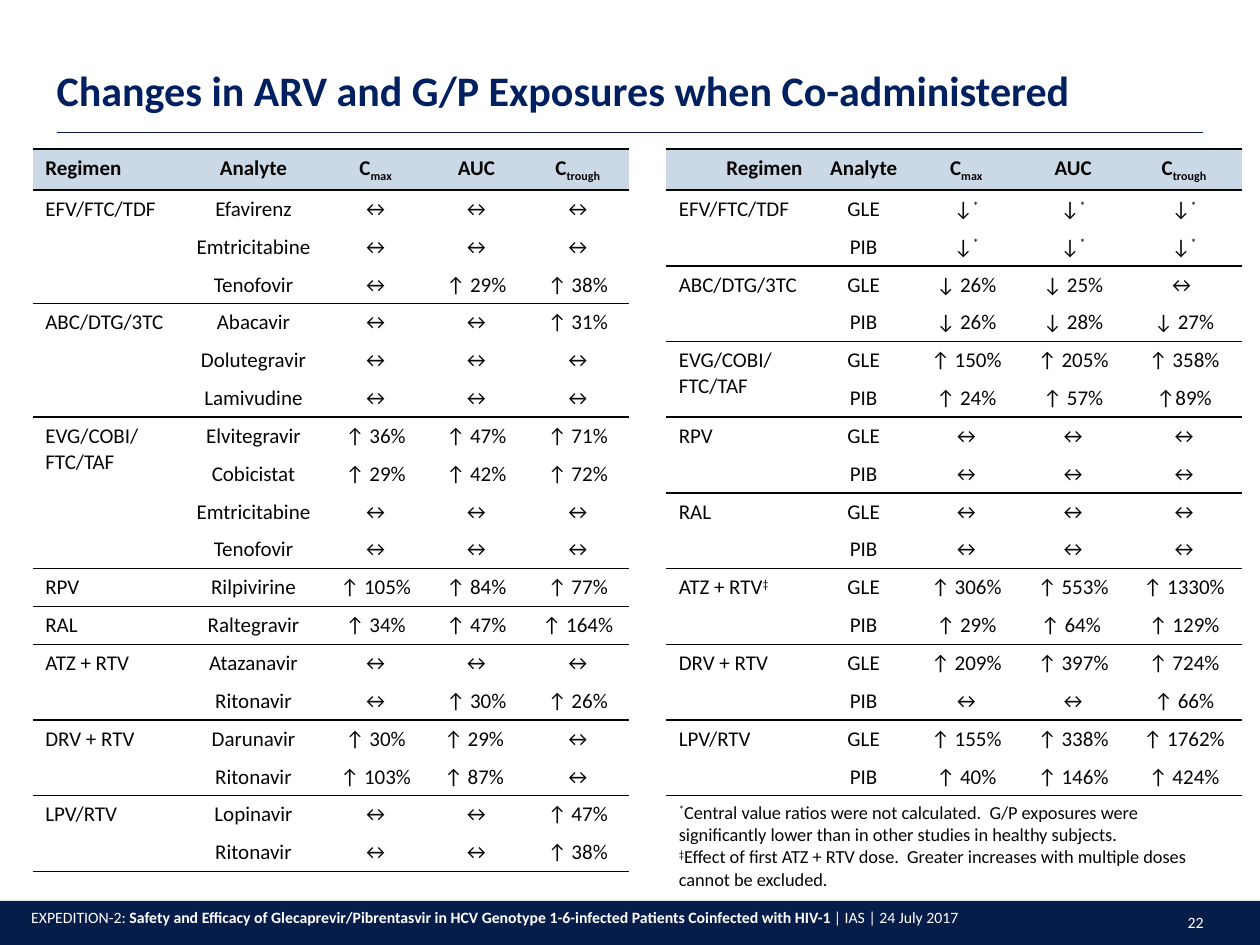
import lxml.etree
import pptx
import pptx.dml.color
import pptx.enum.shapes
import pptx.enum.text
import pptx.oxml.ns
import pptx.util

Cm = pptx.util.Cm
Pt = pptx.util.Pt
qn = pptx.oxml.ns.qn
ALIGN = pptx.enum.text.PP_ALIGN
ANCHOR = pptx.enum.text.MSO_ANCHOR

NAVY, TITLE_BLUE, INK, HEADER_BLUE, WHITE = "071D49", "002060", "070605", "CBD9E7", "FFFFFF"
FONT = "Calibri"
NO_STYLE = "{2D5ABB26-0587-4C30-8999-92F81FD0307C}"
BASELINES = {"_": "-25000", "^": "30000"}
HEADER_HEIGHT, ROW_HEIGHT, NOTE_HEIGHT = 0.83, 0.76, 2.03
HEADINGS = ["Regimen", "Analyte", "C|_max", "AUC", "C|_trough"]

ARV_GROUPS = [
    ("EFV/FTC/TDF", ["Efavirenz,↔,↔,↔", "Emtricitabine,↔,↔,↔", "Tenofovir,↔,↑ 29%,↑ 38%"]),
    ("ABC/DTG/3TC", ["Abacavir,↔,↔,↑ 31%", "Dolutegravir,↔,↔,↔", "Lamivudine,↔,↔,↔"]),
    ("EVG/COBI/\nFTC/TAF", ["Elvitegravir,↑ 36%,↑ 47%,↑ 71%", "Cobicistat,↑ 29%,↑ 42%,↑ 72%",
                            "Emtricitabine,↔,↔,↔", "Tenofovir,↔,↔,↔"]),
    ("RPV", ["Rilpivirine,↑ 105%,↑ 84%,↑ 77%"]),
    ("RAL", ["Raltegravir,↑ 34%,↑ 47%,↑ 164%"]),
    ("ATZ + RTV", ["Atazanavir,↔,↔,↔", "Ritonavir,↔,↑ 30%,↑ 26%"]),
    ("DRV + RTV", ["Darunavir,↑ 30%,↑ 29% ,↔", "Ritonavir,↑ 103%,↑ 87% ,↔"]),
    ("LPV/RTV", ["Lopinavir,↔,↔,↑ 47%", "Ritonavir,↔,↔,↑ 38%"]),
]
GP_GROUPS = [
    ("EFV/FTC/TDF", ["GLE,↓|^*,↓|^*,↓|^*", "PIB,↓|^*,↓|^*,↓|^*"]),
    ("ABC/DTG/3TC", ["GLE,↓ 26%,↓ 25%,↔ ", "PIB,↓ 26%,↓ 28%,↓ 27%"]),
    ("EVG/COBI/\nFTC/TAF", ["GLE,↑ 150%,↑ 205%,↑ 358%", "PIB,↑ 24%,↑ 57%,↑89%"]),
    ("RPV", ["GLE,↔,↔,↔", "PIB,↔,↔,↔"]),
    ("RAL", ["GLE,↔,↔,↔", "PIB,↔,↔,↔"]),
    ("ATZ + RTV|^‡", ["GLE,↑ 306%,↑ 553%,↑ 1330%", "PIB,↑ 29%,↑ 64% ,↑ 129%"]),
    ("DRV + RTV", ["GLE,↑ 209%,↑ 397%,↑ 724%", "PIB,↔,↔,↑ 66%"]),
    ("LPV/RTV", ["GLE,↑ 155%,↑ 338%,↑ 1762%", "PIB,↑ 40%,↑ 146%,↑ 424%"]),
]
NOTES = [
    "|^*|Central value ratios were not calculated.  G/P exposures were "
    "significantly lower than in other studies in healthy subjects.",
    "|^‡|Effect of first ATZ + RTV dose.  Greater increases with multiple doses cannot be excluded.",
]


def color(value):
    return pptx.dml.color.RGBColor.from_string(value)


def format_run(run, size, value, bold=False):
    run.font.name = FONT
    run.font.size = Pt(size)
    run.font.bold = bold
    run.font.color.rgb = color(value)


def write_marked(paragraph, text, size, bold=False, align=ALIGN.LEFT):
    first, *parts = text.split("|")
    paragraph.text = first
    paragraph.alignment = align
    for part in parts:
        run = paragraph.add_run()
        run.text = part.lstrip("_^")
        if part[0] in BASELINES:
            run.font._element.set("baseline", BASELINES[part[0]])
    for run in paragraph.runs:
        format_run(run, size, INK, bold)
    element = paragraph._p
    for line_break in element.findall(qn("a:br")):
        lxml.etree.SubElement(line_break, qn("a:rPr"), sz=str(size * 100))
    if not text:
        lxml.etree.SubElement(element, qn("a:endParaRPr"), sz=str(size * 100))


def style_cell(cell, top=False, bottom=False, fill=None):
    properties = cell._tc.get_or_add_tcPr()
    for side, visible in (("a:lnL", False), ("a:lnR", False), ("a:lnT", top), ("a:lnB", bottom)):
        line = lxml.etree.SubElement(properties, qn(side), w=str(Pt(1)))
        paint = lxml.etree.SubElement(line, qn("a:solidFill" if visible else "a:noFill"))
        if visible:
            lxml.etree.SubElement(paint, qn("a:srgbClr"), val=INK)
    if fill:
        cell.fill.solid()
        cell.fill.fore_color.rgb = color(fill)
    else:
        cell.fill.background()


def add_exposure_table(slide, left, top, widths, groups, first_align, notes=()):
    heights = [HEADER_HEIGHT] + [ROW_HEIGHT] * sum(len(lines) for _, lines in groups)
    heights += [NOTE_HEIGHT] if notes else []
    frame = slide.shapes.add_table(len(heights), len(widths), Cm(left), Cm(top),
                                   Cm(sum(widths)), Cm(sum(heights)))
    table = frame.table
    table.first_row = table.horz_banding = False
    table._tbl.tblPr.find(qn("a:tableStyleId")).text = NO_STYLE
    for column, width in zip(table.columns, widths):
        column.width = Cm(width)
    for row, height in zip(table.rows, heights):
        row.height = Cm(height)

    for index, heading in enumerate(HEADINGS):
        cell = table.cell(0, index)
        align = ALIGN.CENTER if index else first_align
        write_marked(cell.text_frame.paragraphs[0], heading, 12, True, align)
        style_cell(cell, True, True, HEADER_BLUE)

    row_index = 1
    for regimen, lines in groups:
        for offset, line in enumerate(lines):
            values = ["" if offset else regimen] + line.split(",")
            for index, value in enumerate(values):
                cell = table.cell(row_index + offset, index)
                align = ALIGN.CENTER if index else ALIGN.LEFT
                write_marked(cell.text_frame.paragraphs[0], value, 12, align=align)
                style_cell(cell, offset == 0, offset == len(lines) - 1)
        if "\n" in regimen:
            table.cell(row_index, 0).merge(table.cell(row_index + 1, 0))
        row_index += len(lines)

    if notes:
        for index in range(len(widths)):
            style_cell(table.cell(row_index, index), top=True)
        note_cell = table.cell(row_index, 0)
        note_cell.merge(table.cell(row_index, len(widths) - 1))
        note_cell.text_frame.text = "\n".join(notes)
        for paragraph, note in zip(note_cell.text_frame.paragraphs, notes):
            write_marked(paragraph, note, 10.5)


def add_title(slide, left, top, width, height):
    title = slide.shapes.title
    title.left, title.top, title.width, title.height = Cm(left), Cm(top), Cm(width), Cm(height)
    title.text_frame.text = "Changes in ARV and G/P Exposures when Co-administered"
    title.text_frame.vertical_anchor = ANCHOR.MIDDLE
    paragraph = title.text_frame.paragraphs[0]
    paragraph.alignment = ALIGN.LEFT
    format_run(paragraph.runs[0], 24, TITLE_BLUE, True)
    rule = slide.shapes.add_connector(pptx.enum.shapes.MSO_CONNECTOR.STRAIGHT, Cm(left + 0.25),
                                      Cm(top + 1.5), Cm(left + 23.37), Cm(top + 1.5))
    rule.line.color.rgb = color(NAVY)
    rule.line.width = Pt(0.75)
    lxml.etree.SubElement(rule._element.spPr, qn("a:effectLst"))


def add_footer_text(slide, left, top, width, parts, align):
    box = slide.shapes.add_textbox(Cm(left), Cm(top), Cm(width), Cm(0.6))
    box.text_frame.word_wrap = True
    paragraph = box.text_frame.paragraphs[0]
    paragraph.alignment = align
    paragraph.line_spacing = 0.9
    for text, bold in parts:
        run = paragraph.add_run()
        run.text = text
        format_run(run, 9, WHITE, bold)


def add_footer(slide, left, top, width, height):
    band = slide.shapes.add_shape(pptx.enum.shapes.MSO_SHAPE.RECTANGLE,
                                  Cm(left), Cm(top), Cm(width), Cm(height))
    band.shadow.inherit = False
    band.fill.solid()
    band.fill.fore_color.rgb = color(NAVY)
    band.line.fill.background()
    add_footer_text(slide, left + 23.62, top + 0.15, 0.97, [("22", False)], ALIGN.CENTER)
    add_footer_text(slide, left + 0.38, top + 0.05, 23, [
        ("EXPEDITION-2: ", False),
        ("Safety and Efficacy of Glecaprevir/Pibrentasvir in HCV Genotype 1-6-infected "
         "Patients Coinfected with HIV-1 ", True),
        ("| IAS | 24 July 2017", False),
    ], ALIGN.LEFT)


def main():
    presentation = pptx.Presentation()
    presentation.slide_width, presentation.slide_height = Cm(25.4), Cm(19.05)
    slide = presentation.slides.add_slide(presentation.slide_layouts[5])
    add_footer(slide, 0, 18.16, 25.4, 0.89)
    add_title(slide, 0.89, 1.17, 23.55, 1.27)
    add_exposure_table(slide, 0.66, 3, [3, 2.9, 2.03, 2.03, 2.06], ARV_GROUPS, ALIGN.LEFT)
    add_exposure_table(slide, 13.43, 3, [3, 1.96, 2.18, 2.13, 2.34], GP_GROUPS, ALIGN.RIGHT, NOTES)
    presentation.save("out.pptx")


if __name__ == "__main__":
    main()
